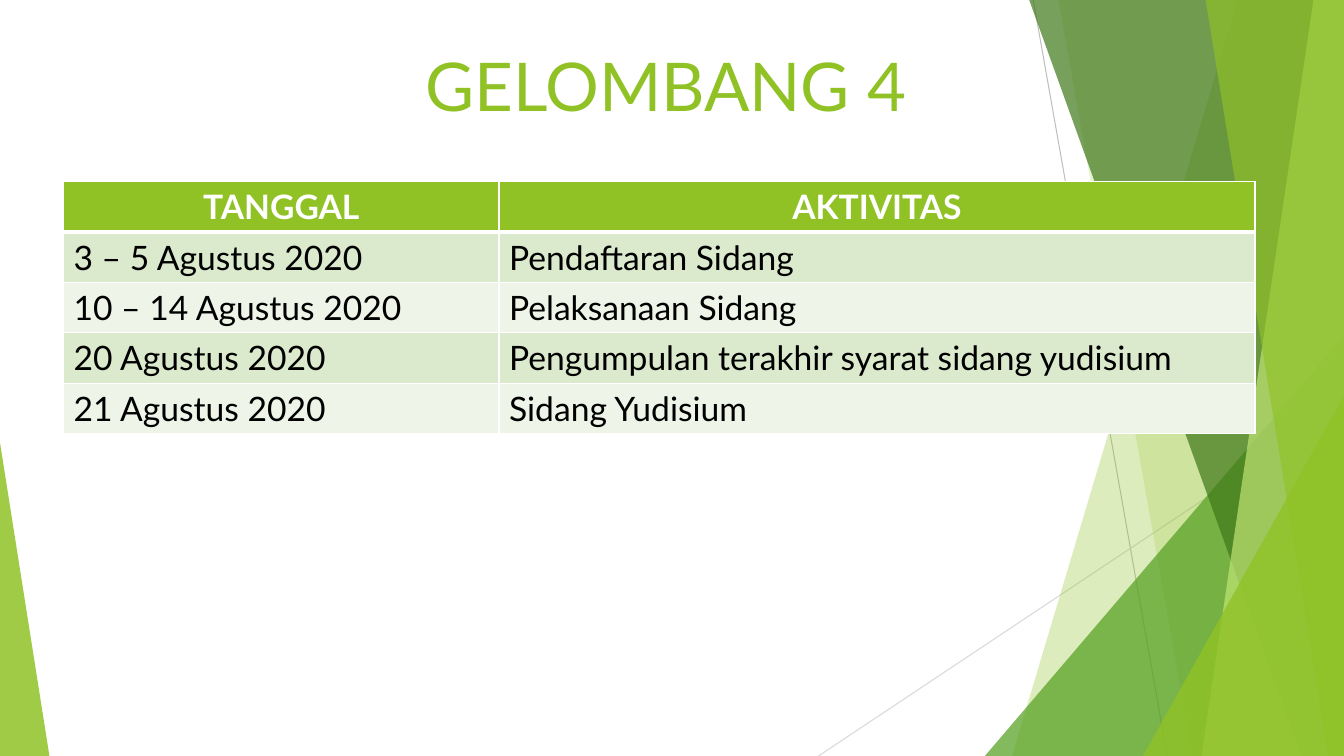
from lxml.etree import SubElement
from pptx import Presentation
from pptx.dml.color import RGBColor
from pptx.enum.shapes import MSO_CONNECTOR as Connector, MSO_SHAPE as Shape
from pptx.enum.text import MSO_ANCHOR as Anchor, PP_ALIGN as Align
from pptx.oxml.ns import qn
from pptx.util import Inches, Pt

THEME = {
    "font": "Lato", "title_size": Pt(48), "table_size": Pt(24),
    "lime": "90C226", "green": "54A021", "forest": "3F7819", "pale": "C0E474",
    "white": "FFFFFF", "black": "000000",
    "bands": ("DBE9CD", "EEF4E8"), "rays": ("BFBFBF", "D9D9D9"),
}

deck = Presentation()
deck.slide_width, deck.slide_height = Inches(13.33), Inches(7.5)
page = deck.slides.add_slide(deck.slide_layouts[6])


# Lengths are percentages of the slide's width and height
def across(share):
    return round(deck.slide_width * share / 100)


def down(share):
    return round(deck.slide_height * share / 100)


# Thin rays behind the facets
rays = [(76.88, 0, 86.85, 100), (100, 53.73, 60.9, 100)]
for (x1, y1, x2, y2), color in zip(rays, THEME["rays"]):
    ray = page.shapes.add_connector(
        Connector.STRAIGHT, across(x1), down(y1), across(x2), down(y2))
    ray.line.color.rgb = RGBColor.from_string(color)
    ray.line.width = Pt(0.75)
    SubElement(ray._element.spPr, qn("a:effectLst"))

# Translucent facets, back to front
# slab: left edge at the top and at the bottom, reaching the right side
# peak: left, top, right and apex position, standing on the bottom
facets = [
    ("slab", (92.1, 75.3), "lime", 30),
    ("slab", (78.75, 88.73), "lime", 20),
    ("peak", (73.28, 44.4, 100, 1), "green", 72),
    ("slab", (76.58, 96.83), "forest", 70),
    ("slab", (97.73, 89.4), "pale", 70),
    ("slab", (89.7, 98.85), "lime", 65),
    ("peak", (85.05, 52.4, 100, 1), "lime", 80),
    ("peak", (0, 58.53, 3.68, 0), "lime", 85),
]
for kind, place, color, opacity in facets:
    if kind == "slab":
        top_x, bottom_x = map(across, place)
        outline = page.shapes.build_freeform(top_x, 0)
        outline.add_line_segments([
            (across(100), 0), (across(100), down(100)), (bottom_x, down(100))])
        facet = outline.convert_to_shape()
    else:
        left, top, right, apex = place
        facet = page.shapes.add_shape(
            Shape.ISOSCELES_TRIANGLE, across(left), down(top),
            across(right - left), down(100 - top))
        facet.adjustments[0] = apex
    facet.shadow.inherit = False
    facet.line.fill.background()
    facet.fill.solid()
    facet.fill.fore_color.rgb = RGBColor.from_string(THEME[color])
    tint = facet._element.spPr.find(qn("a:solidFill"))[0]
    SubElement(tint, qn("a:alpha"), val=str(opacity * 1000))

# Title
box = page.shapes.add_textbox(across(30.9), down(5.2), across(41.55), down(8.93))
box.text_frame.word_wrap = True
box.text_frame.vertical_anchor = Anchor.TOP
span = box.text_frame.paragraphs[0].add_run()
span.text = "GELOMBANG 4"
title_format = {"name": THEME["font"], "size": THEME["title_size"]}
for key, value in title_format.items():
    setattr(span.font, key, value)
span.font.color.rgb = RGBColor.from_string(THEME["lime"])

# Schedule table
schedule = [
    ("TANGGAL", "AKTIVITAS"),
    ("3 – 5 Agustus 2020", "Pendaftaran Sidang"),
    ("10 – 14 Agustus 2020", "Pelaksanaan Sidang"),
    ("20 Agustus 2020", "Pengumpulan terakhir syarat sidang yudisium"),
    ("21 Agustus 2020", "Sidang Yudisium"),
]
column_shares, row_share = (32.4, 56.25), 6.67
table = page.shapes.add_table(
    len(schedule), len(column_shares), across(4.73), down(24),
    across(sum(column_shares)), down(row_share * len(schedule))).table
for column, share in zip(table.columns, column_shares):
    column.width = across(share)

for r, entries in enumerate(schedule):
    table.rows[r].height = down(row_share)
    header = r == 0
    fill = THEME["lime"] if header else THEME["bands"][(r - 1) % 2]
    ink = THEME["white"] if header else THEME["black"]
    cell_format = {"name": THEME["font"], "size": THEME["table_size"], "bold": header}
    # A heavier rule separates the header from the dates
    borders = {"lnL": 1, "lnR": 1, "lnT": 3 if r == 1 else 1, "lnB": 3 if header else 1}
    for c, entry in enumerate(entries):
        cell = table.cell(r, c)
        para = cell.text_frame.paragraphs[0]
        para.alignment = Align.CENTER if header else Align.LEFT
        span = para.add_run()
        span.text = entry
        for key, value in cell_format.items():
            setattr(span.font, key, value)
        span.font.color.rgb = RGBColor.from_string(ink)
        properties = cell._tc.get_or_add_tcPr()
        for side, points in borders.items():
            edge = SubElement(properties, qn(f"a:{side}"), w=str(Pt(points)))
            paint = SubElement(edge, qn("a:solidFill"))
            SubElement(paint, qn("a:srgbClr"), val=THEME["white"])
        cell.fill.solid()
        cell.fill.fore_color.rgb = RGBColor.from_string(fill)

deck.save("out.pptx")
